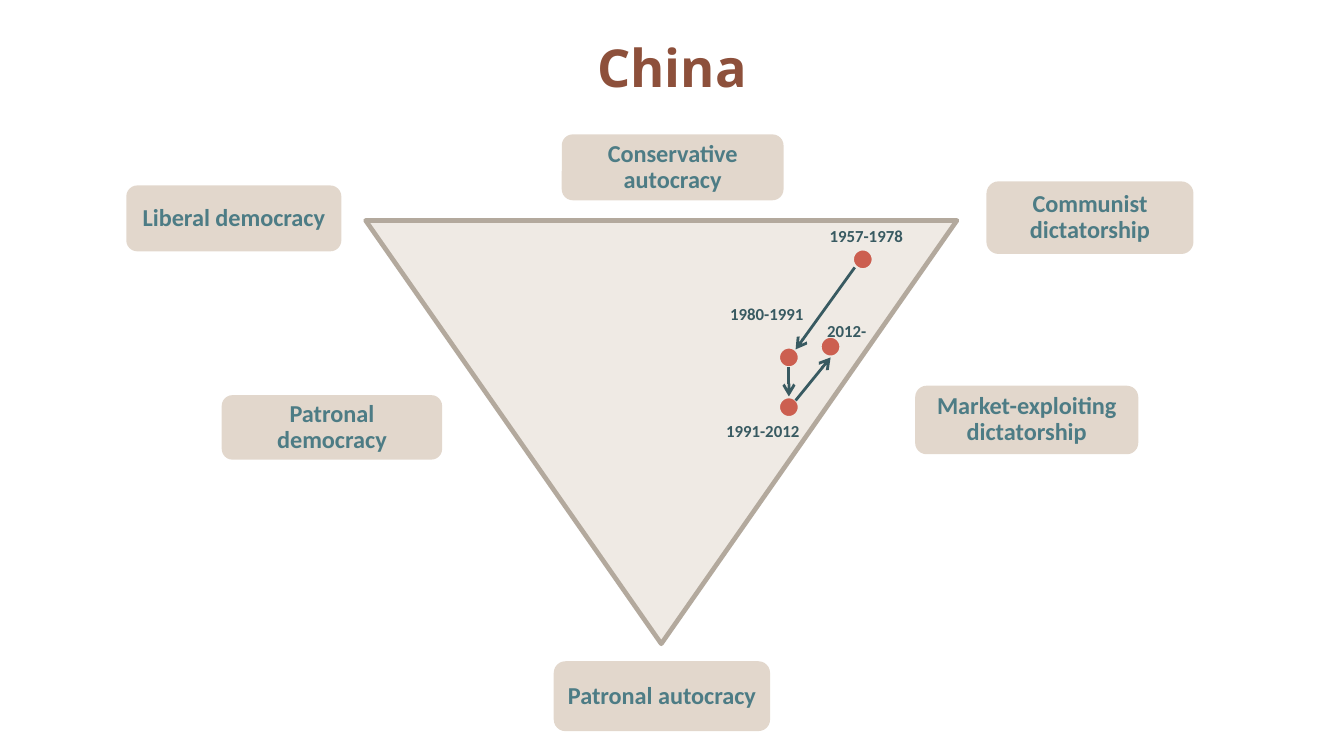
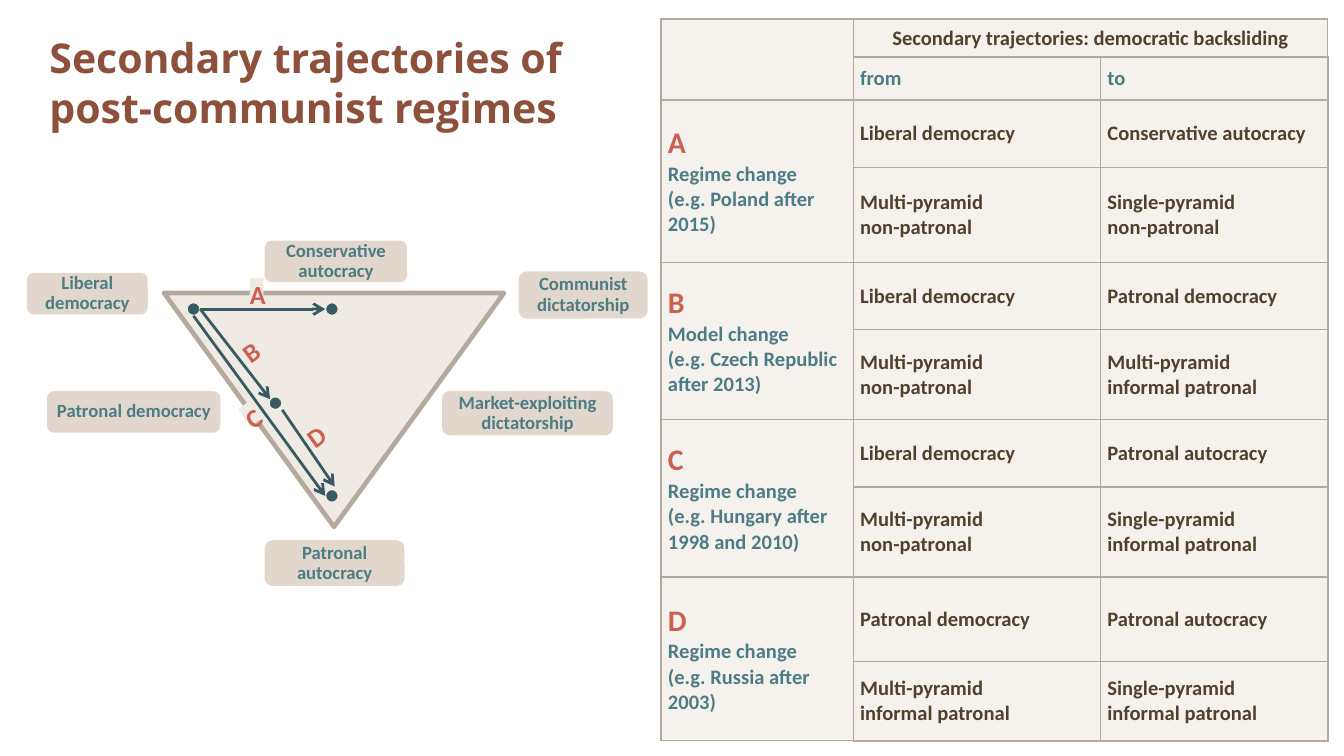
import dataclasses

import pptx
import pptx.dml.color
import pptx.enum.shapes
import pptx.enum.text
import pptx.oxml
import pptx.oxml.ns
import pptx.util
from lxml import etree

PX = 9144  # EMU per px, 100 px to the inch
SHAPES = pptx.enum.shapes.MSO_SHAPE
ALIGN = pptx.enum.text.PP_ALIGN
ANCHOR = pptx.enum.text.MSO_ANCHOR
RGB = pptx.dml.color.RGBColor.from_string
qn = pptx.oxml.ns.qn


@dataclasses.dataclass(frozen=True)
class Theme:
    title_font: str = "Open Sans"
    body_font: str = "Calibri"
    title: str = "8D503B"
    label: str = "4D7C85"
    label_fill: str = "C7B09A"
    pale: str = "EFEAE4"
    border: str = "B3A99D"
    dark: str = "385A61"
    accent: str = "CC5F50"
    cell_text: str = "50412B"
    year_size: int = 9
    table_size: int = 11
    letter_size: int = 14
    lead_size: int = 16


theme = Theme()


def write(holder, text, size, color, font=theme.body_font, align=ALIGN.LEFT,
          anchor=ANCHOR.MIDDLE, inset=(10, 5), spacing=1.0):
    """Append one paragraph per line of text to a shape or a table cell."""
    frame = holder.text_frame
    frame.word_wrap = True
    box = frame if hasattr(holder, "shape_type") else holder
    box.vertical_anchor = anchor
    box.margin_left = box.margin_right = inset[0] * PX
    box.margin_top = box.margin_bottom = inset[1] * PX
    for line in text.split("\n"):
        paragraph = frame.add_paragraph() if frame.text else frame.paragraphs[0]
        paragraph.alignment = align
        paragraph.line_spacing = spacing
        if not line:  # an empty cell still needs its type size
            etree.SubElement(paragraph._p, qn("a:endParaRPr"), sz=str(size * 100))
            continue
        run = paragraph.add_run()
        run.text = line
        run.font.name = font
        run.font.size = pptx.util.Pt(size)
        run.font.bold = True
        run.font.color.rgb = RGB(color)


def add_filled(slide, kind, box, color, opacity=100, line=None, rotation=0):
    """Add a preset shape; line is a (colour, points) pair or None."""
    shape = slide.shapes.add_shape(kind, *[length * PX for length in box])
    shape.shadow.inherit = False
    shape.rotation = rotation
    shape.fill.solid()
    shape.fill.fore_color.rgb = RGB(color)
    if opacity < 100:
        fill_color = shape._element.spPr.find(qn("a:solidFill") + "/" + qn("a:srgbClr"))
        etree.SubElement(fill_color, qn("a:alpha"), val=str(opacity * 1000))
    if line:
        shape.line.color.rgb = RGB(line[0])
        shape.line.width = pptx.util.Pt(line[1])
    else:
        shape.line.fill.background()
    return shape


diagrams = [
    {
        "title": ("China", (12, -1, 976, 101), 28, ALIGN.CENTER),
        "triangle": (272, 164, 440, 315),
        "label_size": 13,
        "label_inset": 7,
        "labels": [
            ("Communist dictatorship", (734, 135, 154, 54)),
            ("Liberal democracy", (94, 138, 160, 49)),
            ("Patronal autocracy", (412, 492, 161, 52)),
            ("Conservative autocracy", (418, 100, 165, 49)),
            ("Market-exploiting dictatorship", (681, 287, 166, 51)),
            ("Patronal democracy", (165, 294, 164, 48)),
        ],
        "dot": (16, theme.accent, 2),
        "dots": [(634, 185), (579, 258), (579, 295), (610, 250)],
        "arrows": [(592, 298, 618, 266), (587, 273, 587, 295), (636, 199, 592, 260)],
        "years": [
            ("1957-1978", (605, 163, 79, 25)),
            ("1980-1991", (531, 221, 79, 25)),
            ("1991-2012", (528, 308, 79, 25)),
            ("2012-", (602, 234, 56, 25)),
        ],
        "letters": [],
    },
    {
        "title": ("Secondary trajectories of post-communist regimes",
                  (27, 14, 457, 94), 22, ALIGN.LEFT),
        "triangle": (122, 218, 253, 174),
        "label_size": 10,
        "label_inset": 4,
        "labels": [
            ("Communist dictatorship", (386, 202, 96, 35)),
            ("Liberal democracy", (20, 203, 90, 31)),
            ("Patronal autocracy", (197, 402, 104, 34)),
            ("Conservative autocracy", (197, 179, 106, 31)),
            ("Market-exploiting dictatorship", (329, 291, 127, 33)),
            ("Patronal democracy", (35, 291, 129, 31)),
        ],
        "dot": (10, theme.dark, 1),
        "dots": [(139, 225), (242, 225), (242, 364), (200, 295)],
        "arrows": [(144, 235, 242, 369), (149, 230, 201, 297),
                   (210, 305, 249, 362), (149, 230, 242, 230)],
        "years": [],
        "letters": [  # letter, box, rotation, on a pale plate
            ("A", (186, 207, 10, 17), 0, True),
            ("B", (179, 251, 10, 16), 323.7, False),
            ("C", (181, 300, 10, 16), 323.7, True),
            ("D", (227, 314, 10, 16), 323.7, False),
        ],
    },
]

presentation = pptx.Presentation()
presentation.slide_width = 1000 * PX
presentation.slide_height = presentation.slide_width * 9 // 16

for diagram in diagrams:
    slide = presentation.slides.add_slide(presentation.slide_layouts[6])
    add_filled(slide, SHAPES.ISOSCELES_TRIANGLE, diagram["triangle"], theme.pale,
               line=(theme.border, 2.5), rotation=180)
    for text, box in diagram["labels"]:
        label = add_filled(slide, SHAPES.ROUNDED_RECTANGLE, box, theme.label_fill, opacity=50)
        write(label, text, diagram["label_size"], theme.label, align=ALIGN.CENTER,
              inset=(diagram["label_inset"],) * 2, spacing=0.9)

    text, box, size, align = diagram["title"]
    title = slide.shapes.add_textbox(*[length * PX for length in box])
    write(title, text, size, theme.title, font=theme.title_font, align=align)

    diameter, color, outline = diagram["dot"]
    for left, top in diagram["dots"]:
        add_filled(slide, SHAPES.OVAL, (left, top, diameter, diameter), color,
                   line=(theme.pale, outline))

    for ends in diagram["arrows"]:
        arrow = slide.shapes.add_connector(pptx.enum.shapes.MSO_CONNECTOR.STRAIGHT,
                                           *[end * PX for end in ends])
        arrow.line.color.rgb = RGB(theme.dark)
        arrow.line.width = pptx.util.Pt(1.5)
        etree.SubElement(arrow.line._get_or_add_ln(), qn("a:tailEnd"), type="arrow")
        etree.SubElement(arrow._element.spPr, qn("a:effectLst"))

    for text, box in diagram["years"]:
        year = slide.shapes.add_textbox(*[length * PX for length in box])
        write(year, text, theme.year_size, theme.dark, align=ALIGN.CENTER, anchor=ANCHOR.TOP)

    for text, box, rotation, plate in diagram["letters"]:
        if plate:
            letter = add_filled(slide, SHAPES.RECTANGLE, box, theme.pale, rotation=rotation)
        else:
            letter = slide.shapes.add_textbox(*[length * PX for length in box])
            letter.rotation = rotation
        write(letter, text, theme.letter_size, theme.accent, align=ALIGN.CENTER,
              anchor=ANCHOR.TOP, inset=(0, 0))

# Table of trajectories, beside the second diagram
trajectories = [
    ("A", "Regime change\n(e.g. Poland after 2015)",
     ("Liberal democracy", "Conservative autocracy"),
     ("Multi-pyramid\nnon-patronal", "Single-pyramid\nnon-patronal")),
    ("B", "Model change\n(e.g. Czech Republic after 2013)",
     ("Liberal democracy", "Patronal democracy"),
     ("Multi-pyramid\nnon-patronal", "Multi-pyramid\ninformal patronal")),
    ("C", "Regime change\n(e.g. Hungary after 1998 and 2010)",
     ("Liberal democracy", "Patronal autocracy"),
     ("Multi-pyramid\nnon-patronal", "Single-pyramid\ninformal patronal")),
    ("D", "Regime change\n(e.g. Russia after 2003)",
     ("Patronal democracy", "Patronal autocracy"),
     ("Multi-pyramid\ninformal patronal", "Single-pyramid\ninformal patronal")),
]
column_widths = [143, 184, 169]
row_heights = [27, 32, 50, 71, 50, 67, 50, 67, 63, 59]
last_row, last_column = len(row_heights) - 1, len(column_widths) - 1

rows = [("", "Secondary trajectories: democratic backsliding", ""), ("", "from", "to")]
for letter, change, regimes, pyramids in trajectories:
    rows += [(change, *regimes), ("", *pyramids)]

table_frame = slide.shapes.add_table(len(row_heights), len(column_widths), 492 * PX, 14 * PX,
                                     sum(column_widths) * PX, sum(row_heights) * PX)
table = table_frame.table
table.first_row = table.horz_banding = False
for column, width in zip(table.columns, column_widths):
    column.width = width * PX
for row, height in zip(table.rows, row_heights):
    row.height = height * PX

table.cell(0, 1).merge(table.cell(0, 2))
for top_row in range(0, len(rows), 2):
    table.cell(top_row, 0).merge(table.cell(top_row + 1, 0))

for row_index, texts in enumerate(rows):
    for column_index, text in enumerate(texts):
        cell = table.cell(row_index, column_index)
        if column_index == 0 and text:
            write(cell, trajectories[row_index // 2 - 1][0], theme.lead_size, theme.accent,
                  inset=(5, 5))
        write(cell, text, theme.table_size,
              theme.label if column_index == 0 or row_index == 1 else theme.cell_text,
              align=ALIGN.CENTER if row_index == 0 else ALIGN.LEFT, inset=(5, 5))

        cell.fill.solid()
        cell.fill.fore_color.rgb = RGB(theme.pale)
        properties = cell._tc.get_or_add_tcPr()
        fill_color = properties.find(qn("a:solidFill") + "/" + qn("a:srgbClr"))
        etree.SubElement(fill_color, qn("a:alpha"), val="60000")
        outer_edges = [("L", column_index == 0), ("R", column_index == last_column),
                       ("T", row_index == 0), ("B", row_index == last_row)]
        for position, (side, outer) in enumerate(outer_edges):
            width = pptx.util.Pt(1 if outer else 0.75)
            properties.insert(position, pptx.oxml.parse_xml(
                f'<a:ln{side} {pptx.oxml.ns.nsdecls("a")} w="{width}"><a:solidFill>'
                f'<a:srgbClr val="{theme.border}"/></a:solidFill></a:ln{side}>'))

presentation.save("out.pptx")
